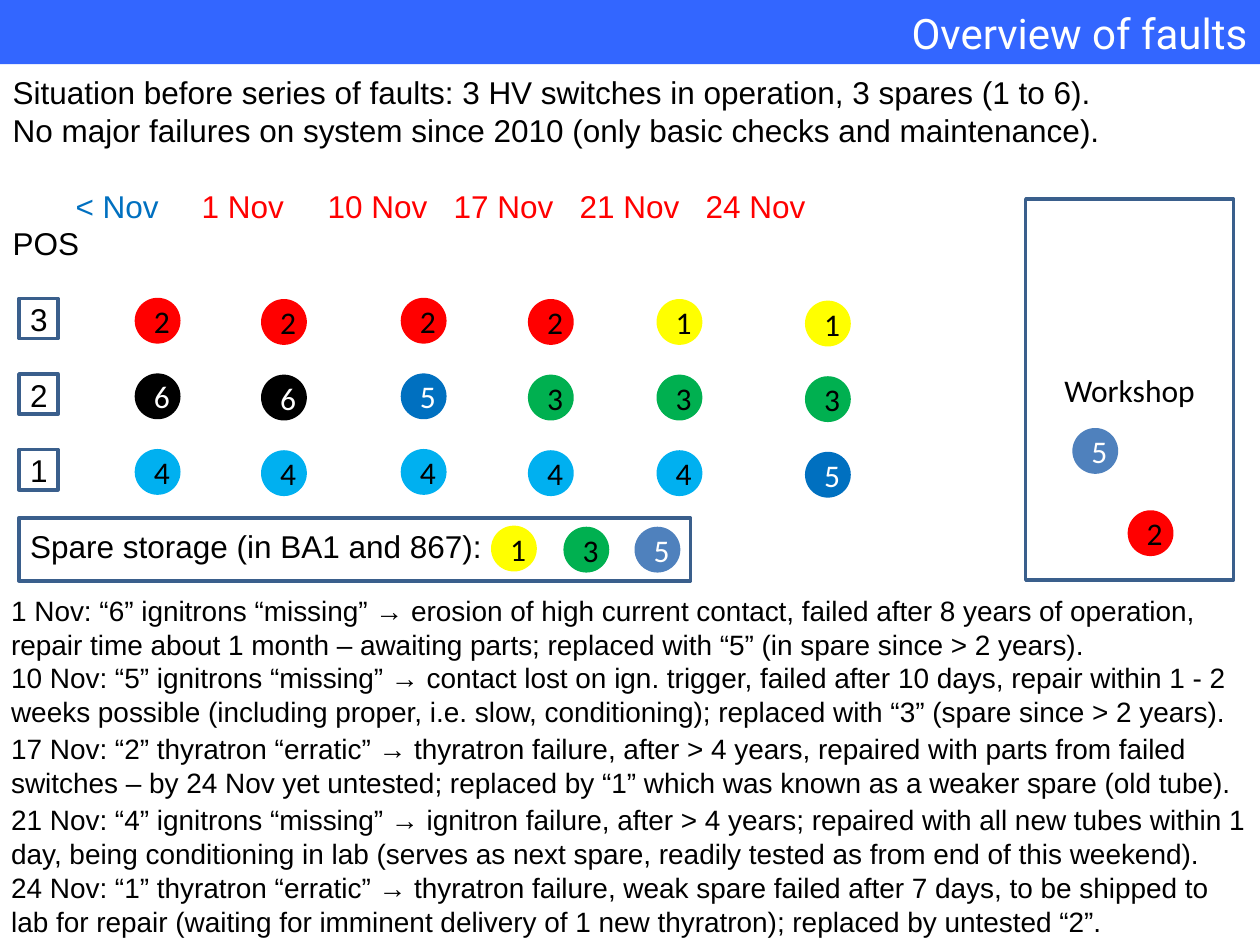
"""Build the slide "Overview of faults" with a switch timeline and fault notes."""
import pptx
import pptx.dml.color
import pptx.enum.shapes
import pptx.enum.text
import pptx.util
from lxml import etree
from pptx.oxml.ns import qn

Pt = pptx.util.Pt
RGBColor = pptx.dml.color.RGBColor
SHAPE = pptx.enum.shapes.MSO_SHAPE
ALIGN = pptx.enum.text.PP_ALIGN
ANCHOR = pptx.enum.text.MSO_ANCHOR
AUTO_SIZE = pptx.enum.text.MSO_AUTO_SIZE

WHITE = RGBColor(0xFF, 0xFF, 0xFF)
BLACK = RGBColor(0x00, 0x00, 0x00)
BANNER = RGBColor(0x33, 0x66, 0xFF)
OUTLINE = RGBColor(0x3A, 0x5F, 0x8C)
RED = RGBColor(0xFF, 0x00, 0x00)
YELLOW = RGBColor(0xFF, 0xFF, 0x00)
GREEN = RGBColor(0x00, 0xB0, 0x50)
SKY = RGBColor(0x00, 0xB0, 0xF0)
BLUE = RGBColor(0x00, 0x70, 0xC0)
STEEL = RGBColor(0x4F, 0x81, 0xBD)

SWITCH_COLORS = {"1": YELLOW, "2": RED, "3": GREEN, "4": SKY, "5": BLUE, "6": BLACK}
DIAMETER = 26.2
ROW_TOP, ROW_PITCH = 170.2, 43.2
LINE = 21.6


def add_span(para, text, size, font, color):
    span = para.add_run()
    span.text = text
    span.font.size = Pt(size)
    span.font.name = font
    span.font.color.rgb = color


def add_figure(kind, left, top, width, height, fill=None, line=None, label="", color=BLACK):
    figure = page.shapes.add_shape(kind, Pt(left), Pt(top), Pt(width), Pt(height))
    figure.shadow.inherit = False
    if fill is None:
        figure.fill.background()
    else:
        figure.fill.solid()
        figure.fill.fore_color.rgb = fill
    if line is None:
        figure.line.fill.background()
    else:
        figure.line.color.rgb = line
        figure.line.width = Pt(2)
    if label:
        para = figure.text_frame.paragraphs[0]
        para.alignment = ALIGN.CENTER
        add_span(para, label, 18, "Calibri", color)
    return figure


deck = pptx.Presentation()
deck.slide_width, deck.slide_height = Pt(720), Pt(540)
page = deck.slides.add_slide(deck.slide_layouts[1])
title, body = page.placeholders

banner = add_figure(SHAPE.RECTANGLE, 0, 0, 720, 36.7, fill=BANNER)
title.element.addprevious(banner.element)
title.left, title.top, title.width, title.height = 0, 0, Pt(720), Pt(37)
title.text_frame.auto_size = AUTO_SIZE.NONE
title.text_frame.vertical_anchor = ANCHOR.MIDDLE
para = title.text_frame.paragraphs[0]
para.alignment = ALIGN.RIGHT
add_span(para, "Overview of faults", 24, "Roboto", WHITE)

body.left, body.top, body.width, body.height = 0, Pt(38.2), Pt(720), Pt(291)
body.text_frame.auto_size = AUTO_SIZE.NONE
date_stops = [60, 132.6, 204.6, 281.7, 358.8, 435.8]
dates = ["1 Nov", "10 Nov", "17 Nov", "21 Nov", "24 Nov"]
body_lines = [
    (0, 0, [("Situation before series of faults: 3 HV switches in operation, 3 spares (1 to 6).", BLACK)]),
    (0, 0, [("No major failures on system since 2010 (only basic checks and maintenance).", BLACK)]),
    (LINE, 0, [("\t< Nov", BLUE)] + [("\t" + date, RED) for date in dates]),
    (0, 0, [("POS", BLACK)]),
    (LINE, 10, [("3", BLACK)]),
    (LINE, 10, [("2", BLACK)]),
    (LINE, 10, [("1", BLACK)]),
    (LINE, 10, [("Spare storage (in BA1 and 867):", BLACK)]),
]
for index, (gap, indent, spans) in enumerate(body_lines):
    para = body.text_frame.add_paragraph() if index else body.text_frame.paragraphs[0]
    para.line_spacing = Pt(LINE)
    para.space_before = Pt(gap)
    properties = para._p.get_or_add_pPr()
    properties.set("marL", str(Pt(indent)))
    properties.set("indent", "0")
    etree.SubElement(properties, qn("a:buNone"))
    if len(spans) > 1:
        stops = etree.SubElement(properties, qn("a:tabLst"))
        for stop in date_stops:
            etree.SubElement(stops, qn("a:tab"), pos=str(Pt(stop)), algn="l")
    for text, color in spans:
        add_span(para, text, 18, "Arial", color)

for row in range(3):
    add_figure(SHAPE.RECTANGLE, 10.8, 170.5 + row * ROW_PITCH, 22.3, 23, line=OUTLINE)
add_figure(SHAPE.RECTANGLE, 10.8, 295.9, 383.8, 36, line=OUTLINE)
add_figure(SHAPE.RECTANGLE, 586.1, 113.8, 118.8, 217.6, line=OUTLINE, label="Workshop")

columns = [
    (77, 0, "264"),
    (149.2, 0.7, "264"),
    (229, 0, "254"),
    (301.7, 0.7, "234"),
    (375.2, 0.7, "134"),
    (460, 1.6, "135"),
]
circles = [
    (left, ROW_TOP + shift + row * ROW_PITCH, switch, SWITCH_COLORS[switch])
    for left, shift, switches in columns
    for row, switch in enumerate(switches)
]
circles += [
    (280.6, 300.4, "1", YELLOW),
    (322, 301, "3", GREEN),
    (362.6, 301, "5", STEEL),
    (612.8, 244.6, "5", STEEL),
    (644.4, 291.6, "2", RED),
]
for left, top, switch, fill in circles:
    color = WHITE if switch in "56" else BLACK
    add_figure(SHAPE.OVAL, left, top, DIAMETER, DIAMETER, fill=fill, label=switch, color=color)

notes = [
    (335.5, "1 Nov: “6” ignitrons “missing” → erosion of high current contact, failed after 8 years of operation, "
            "repair time about 1 month – awaiting parts; replaced with “5” (in spare since > 2 years)."),
    (373.9, "10 Nov: “5” ignitrons “missing” → contact lost on ign. trigger, failed after 10 days, repair within 1 - 2 "
            "weeks possible (including proper, i.e. slow, conditioning); replaced with “3” (spare since > 2 years)."),
    (414.5, "17 Nov: “2” thyratron “erratic” → thyratron failure, after > 4 years, repaired with parts from failed "
            "switches – by 24 Nov yet untested; replaced by “1” which was known as a weaker spare (old tube)."),
    (455, "21 Nov: “4” ignitrons “missing” → ignitron failure, after > 4 years; repaired with all new tubes within 1 "
          "day, being conditioning in lab (serves as next spare, readily tested as from end of this weekend)."),
    (493.9, "24 Nov: “1” thyratron “erratic” → thyratron failure, weak spare failed after 7 days, to be shipped to "
            "lab for repair (waiting for imminent delivery of 1 new thyratron); replaced by untested “2”."),
]
for top, text in notes:
    box = page.shapes.add_textbox(Pt(-0.7), Pt(top), Pt(720), Pt(46))
    box.text_frame.word_wrap = True
    para = box.text_frame.paragraphs[0]
    para.line_spacing = Pt(19.3)
    add_span(para, text, 16, "Arial", BLACK)

deck.save("out.pptx")
